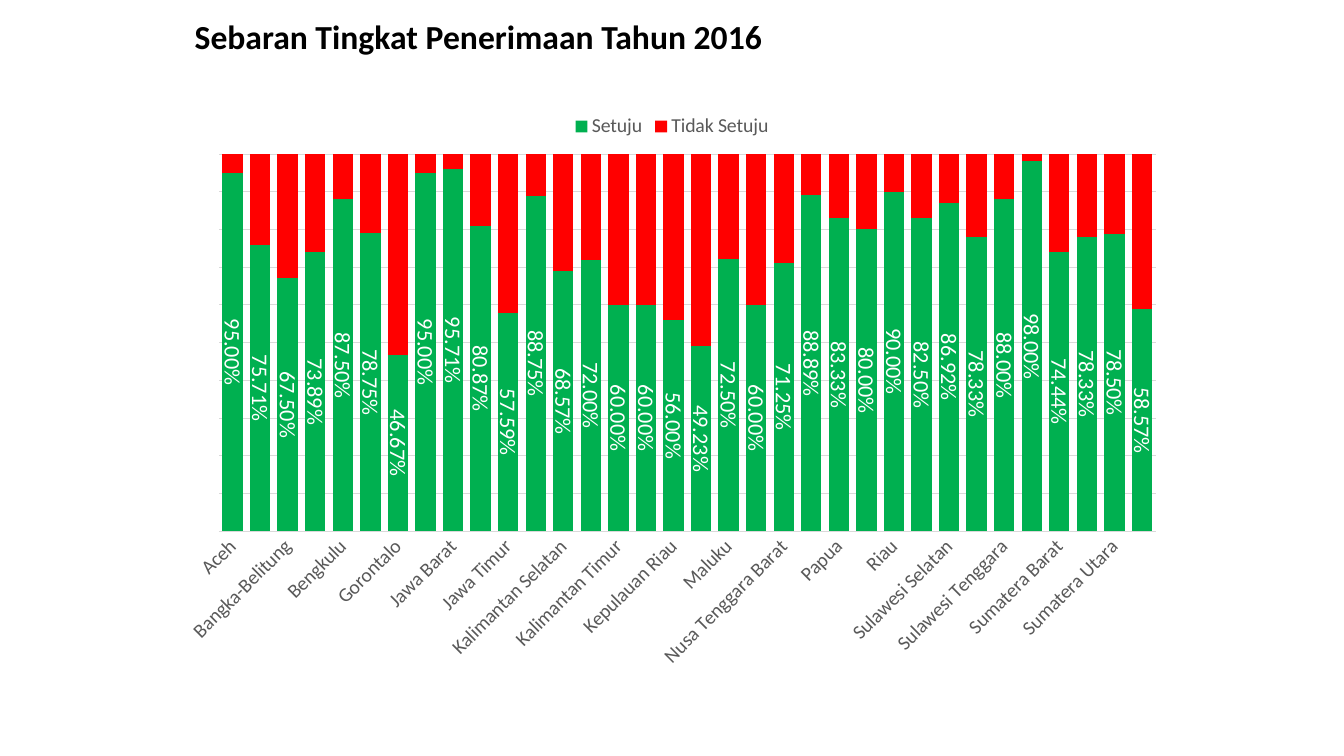
from pptx import Presentation
from pptx.chart.data import CategoryChartData as ChartData
from pptx.dml.color import RGBColor
from pptx.enum.chart import XL_CHART_TYPE as Chart
from pptx.enum.chart import XL_LABEL_POSITION as Spot
from pptx.enum.chart import XL_LEGEND_POSITION as Side
from pptx.enum.chart import XL_TICK_MARK as Tick
from pptx.enum.text import MSO_ANCHOR as Anchor
from pptx.oxml.ns import qn
from pptx.util import Inches, Pt

BLACK = RGBColor(0x00, 0x00, 0x00)
WHITE = RGBColor(0xFF, 0xFF, 0xFF)
GRAY = RGBColor(0x59, 0x59, 0x59)
PALE = RGBColor(0xD9, 0xD9, 0xD9)
GREEN = RGBColor(0x00, 0xB0, 0x50)
RED = RGBColor(0xFF, 0x00, 0x00)
FACE = "Calibri"
FORMAT = "0.00%"

# Share that agrees, by province
AGREE = {
    "Aceh": 0.95, "Bali": 0.7571, "Bangka-Belitung": 0.675,
    "Banten": 0.7389, "Bengkulu": 0.875, "DKI Jakarta": 0.7875,
    "Gorontalo": 0.4667, "Jambi": 0.95, "Jawa Barat": 0.9571,
    "Jawa Tengah": 0.8087, "Jawa Timur": 0.5759,
    "Kalimantan Barat": 0.8875, "Kalimantan Selatan": 0.6857,
    "Kalimantan Tengah": 0.72, "Kalimantan Timur": 0.6,
    "Kalimantan Utara": 0.6, "Kepulauan Riau": 0.56, "Lampung": 0.4923,
    "Maluku": 0.725, "Maluku Utara": 0.6, "Nusa Tenggara Barat": 0.7125,
    "Nusa Tenggara Timur": 0.8889, "Papua": 0.8333, "Papua Barat": 0.8,
    "Riau": 0.9, "Sulawesi Barat": 0.825, "Sulawesi Selatan": 0.8692,
    "Sulawesi Tengah": 0.7833, "Sulawesi Tenggara": 0.88,
    "Sulawesi Utara": 0.98, "Sumatera Barat": 0.7444,
    "Sumatera Selatan": 0.7833, "Sumatera Utara": 0.785,
    "Yogyakarta": 0.5857,
}


def set_font(font, size, color, bold=False):
    font.name, font.size, font.bold = FACE, Pt(size), bold
    font.color.rgb = color


def set_line(line):
    line.color.rgb, line.width = PALE, Pt(0.75)


def turn(part, angle):
    """Rotate the text of an axis or of data labels, in degrees."""
    body = part._element.find(qn("c:txPr")).find(qn("a:bodyPr"))
    body.set("rot", str(angle * 60000))
    body.set("vert", "horz")


def add_title(slide, text):
    box = slide.shapes.add_textbox(Inches(2.09), 0, Inches(11.33), Inches(0.86))
    frame = box.text_frame
    frame.word_wrap = True
    frame.vertical_anchor = Anchor.MIDDLE
    line = frame.paragraphs[0]
    line.text, line.line_spacing = text, 0.9
    set_font(line.font, 27.2, BLACK, True)


def style_axes(chart):
    names = chart.category_axis
    names.major_tick_mark = names.minor_tick_mark = Tick.NONE
    set_font(names.tick_labels.font, 16, GRAY)
    set_line(names.format.line)
    turn(names, -45)
    scale = chart.value_axis
    scale.visible = False
    scale.has_major_gridlines = True
    set_line(scale.major_gridlines.format.line)
    scale.tick_labels.number_format = FORMAT
    scale.tick_labels.number_format_is_linked = False


def add_labels(series):
    labels = series.data_labels
    labels.show_value = True
    labels.number_format = FORMAT
    labels.number_format_is_linked = False
    labels.position = Spot.CENTER
    set_font(labels.font, 18, WHITE)
    turn(labels, 90)


def rest(share):
    """The share left over, in whole percent."""
    return round(round(1 - share, 4), 2)


def add_chart(slide):
    data = ChartData(number_format=FORMAT)
    data.categories = AGREE.keys()
    data.add_series("Setuju", AGREE.values())
    data.add_series("Tidak Setuju", map(rest, AGREE.values()))
    chart = slide.shapes.add_chart(
        Chart.COLUMN_STACKED_100, Inches(1.89), Inches(1.17),
        Inches(11.33), Inches(6.47), data).chart
    chart.has_title = False
    set_font(chart.font, 10, BLACK)

    # Legend
    chart.has_legend = True
    chart.legend.position = Side.TOP
    chart.legend.include_in_layout = False
    set_font(chart.legend.font, 16, GRAY)

    # Columns
    plot = chart.plots[0]
    plot.gap_width, plot.overlap = 35, 100
    plot.vary_by_categories = False
    for series, color in zip(plot.series, (GREEN, RED)):
        series.format.fill.solid()
        series.format.fill.fore_color.rgb = color
    add_labels(plot.series[0])
    style_axes(chart)


def main():
    deck = Presentation()
    deck.slide_width, deck.slide_height = Inches(15.11), Inches(8.5)
    slide = deck.slides.add_slide(deck.slide_layouts[6])
    add_title(slide, "Sebaran Tingkat Penerimaan Tahun 2016")
    add_chart(slide)
    deck.save("out.pptx")


if __name__ == "__main__":
    main()
